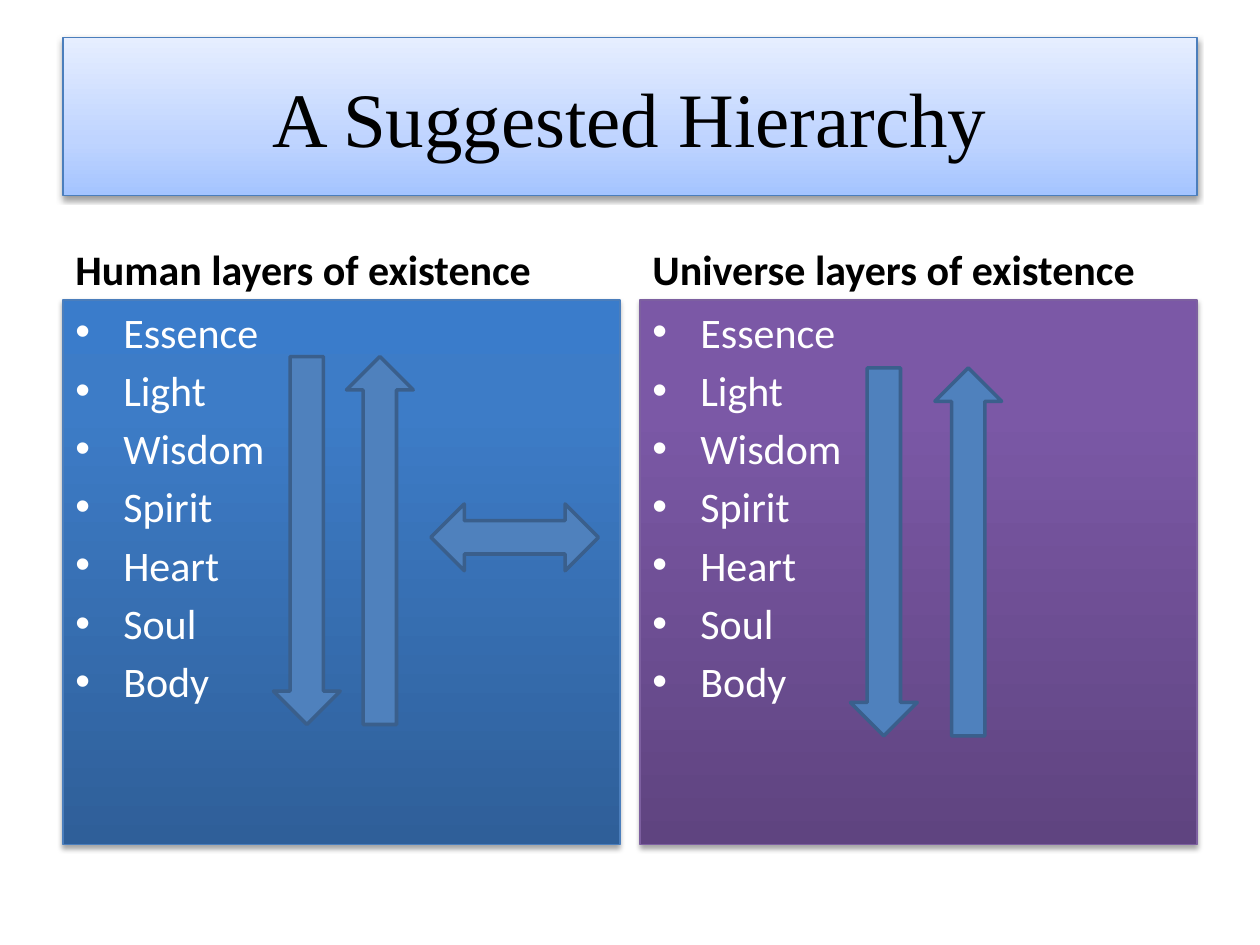
from pptx import Presentation
from pptx.dml.color import RGBColor
from pptx.enum.shapes import MSO_SHAPE
from pptx.enum.text import MSO_ANCHOR, PP_ALIGN
from pptx.oxml import parse_xml
from pptx.oxml.ns import nsdecls, qn
from pptx.util import Inches, Pt

RECT = MSO_SHAPE.RECTANGLE
DOWN, UP = MSO_SHAPE.DOWN_ARROW, MSO_SHAPE.UP_ARROW
BOTH = MSO_SHAPE.LEFT_RIGHT_ARROW
TOP, MIDDLE, BOTTOM = MSO_ANCHOR.TOP, MSO_ANCHOR.MIDDLE, MSO_ANCHOR.BOTTOM
LEFT, CENTER = PP_ALIGN.LEFT, PP_ALIGN.CENTER

TITLE = "A Suggested Hierarchy"
TITLE_STOPS = [(0, "A4C4FF"), (35, "BFD4FF"), (100, "E6EEFF")]
LAYERS = ["Essence", "Light", "Wisdom", "Spirit", "Heart", "Soul", "Body"]
PANELS = [
    # heading, left, gradient stops, border
    ("Human layers of existence", 0.5,
     [(0, "2F5F99"), (80, "3D7CC7"), (100, "3A7CCB")], "4B7EBC"),
    ("Universe layers of existence", 5.08,
     [(0, "5F4480"), (80, "7B58A6"), (100, "7C57A8")], "7D60A0"),
]
PANEL_W, HEAD_TOP, HEAD_H, PANEL_H = 4.42, 1.68, 0.7, 4.32
THICK, LONG, WIDE = 0.53, 2.92, 1.33
ARROWS = [
    (DOWN, 2.17, 2.83, THICK, LONG),
    (UP, 2.75, 2.83, THICK, LONG),
    (DOWN, 6.75, 2.92, THICK, LONG),
    (UP, 7.42, 2.92, THICK, LONG),
    (BOTH, 3.42, 4, WIDE, THICK),
]


def color(code):
    return RGBColor.from_string(code)


def border(shape, code, width):
    shape.line.color.rgb = color(code)
    shape.line.width = Pt(width)


def shade(shape, stops, edge, alpha, dist):
    """Give a box an upward gradient, a thin border and a soft shadow below."""
    shape.fill.gradient()
    grad = shape._element.spPr.find(qn("a:gradFill"))
    for child in list(grad):
        grad.remove(child)
    marks = "".join(
        f'<a:gs pos="{pos * 1000}"><a:srgbClr val="{code}"/></a:gs>'
        for pos, code in stops)
    grad.append(parse_xml(f'<a:gsLst {nsdecls("a")}>{marks}</a:gsLst>'))
    grad.append(parse_xml(
        f'<a:lin {nsdecls("a")} ang="{270 * 60000}" scaled="0"/>'))
    border(shape, edge, 0.75)
    shape.shadow.inherit = False
    shape._element.spPr.find(qn("a:effectLst")).append(parse_xml(
        f'<a:outerShdw {nsdecls("a")} blurRad="{Pt(3.1)}" dist="{Pt(dist)}" '
        f'dir="{90 * 60000}" rotWithShape="0"><a:srgbClr val="000000">'
        f'<a:alpha val="{alpha * 1000}"/></a:srgbClr></a:outerShdw>'))


def write(shape, lines, size, font, code, anchor, align=LEFT, bold=False):
    frame = shape.text_frame
    frame.text = "\n".join(lines)
    frame.word_wrap = True
    frame.vertical_anchor = anchor
    for para in frame.paragraphs:
        para.alignment = align
        for run in para.runs:
            run.font.size = Pt(size)
            run.font.name = font
            run.font.bold = bold
            run.font.color.rgb = color(code)


def bullet(para):
    para.space_before = Pt(4.5)
    props = para._p.get_or_add_pPr()
    props.set("marL", str(Inches(0.38)))
    props.set("indent", str(Inches(-0.38)))
    props.append(parse_xml(f'<a:buFont {nsdecls("a")} typeface="Arial"/>'))
    props.append(parse_xml(f'<a:buChar {nsdecls("a")} char="•"/>'))


def main():
    deck = Presentation()
    deck.slide_width, deck.slide_height = Inches(10), Inches(7.5)
    slide = deck.slides.add_slide(deck.slide_layouts[5])
    shapes = slide.shapes

    title = shapes.title
    title.left, title.top = Inches(0.5), Inches(0.3)
    title.width, title.height = Inches(9), Inches(1.25)
    shade(title, TITLE_STOPS, "4B7EBC", 38, 1.6)
    write(title, [TITLE], 44, "Times New Roman", "000000", MIDDLE, CENTER)

    for text, left, stops, edge in PANELS:
        head = shapes.add_textbox(Inches(left), Inches(HEAD_TOP),
                                  Inches(PANEL_W), Inches(HEAD_H))
        write(head, [text], 24, "Calibri", "000000", BOTTOM, bold=True)
        panel = shapes.add_shape(RECT, Inches(left), Inches(HEAD_TOP + HEAD_H),
                                 Inches(PANEL_W), Inches(PANEL_H))
        shade(panel, stops, edge, 35, 1.8)
        write(panel, LAYERS, 24, "Calibri", "FFFFFF", TOP)
        for para in panel.text_frame.paragraphs:
            bullet(para)

    for kind, *box in ARROWS:
        arrow = shapes.add_shape(kind, *map(Inches, box))
        arrow.shadow.inherit = False
        arrow.fill.solid()
        arrow.fill.fore_color.rgb = color("4F81BD")
        border(arrow, "3A5F8C", 2)

    deck.save("out.pptx")


if __name__ == "__main__":
    main()
